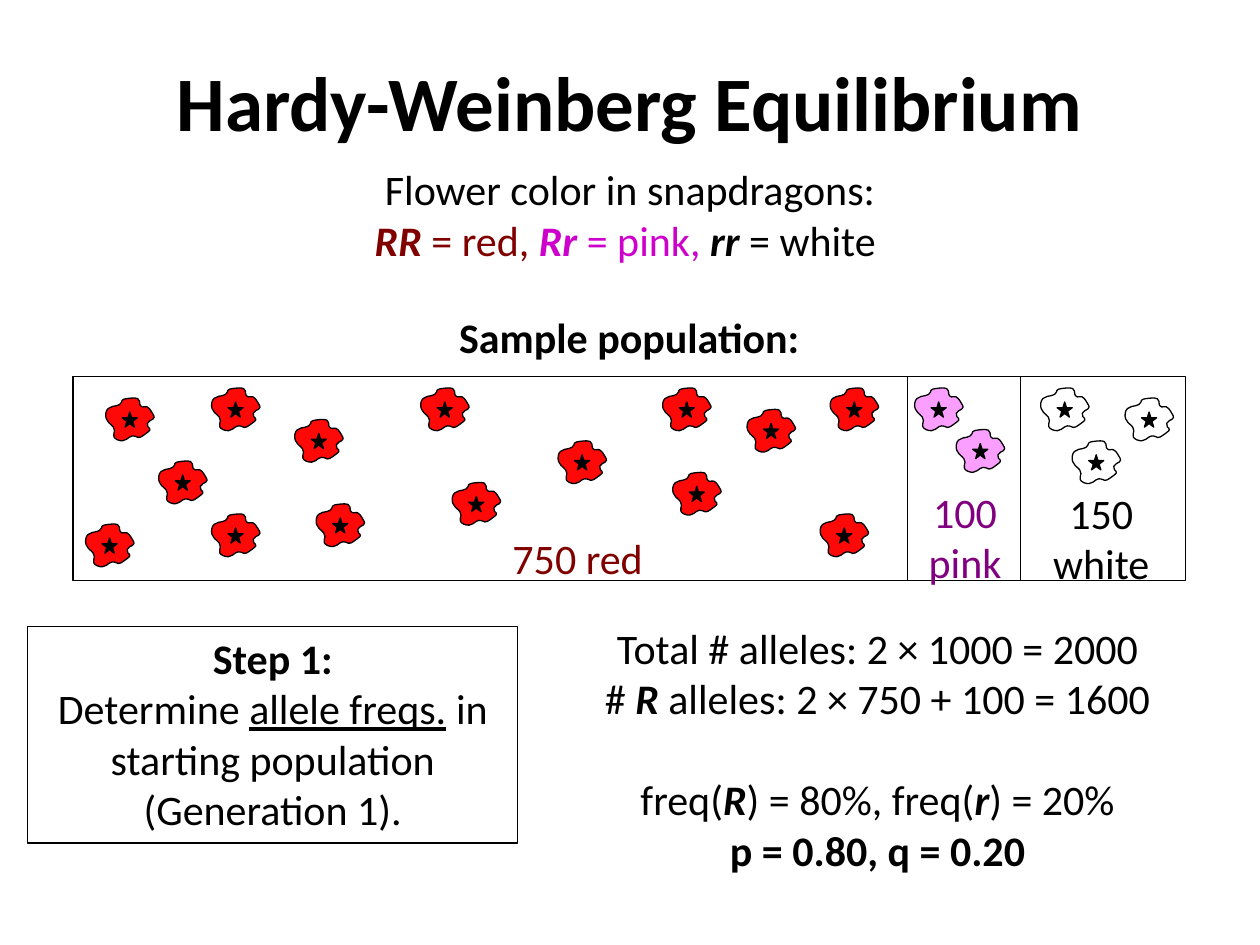
from lxml import etree
from pptx import Presentation
from pptx.dml.color import RGBColor
from pptx.enum.shapes import MSO_CONNECTOR as Connector, MSO_SHAPE as Preset
from pptx.enum.text import MSO_ANCHOR as Anchor, PP_ALIGN as Align
from pptx.oxml.ns import qn
from pptx.util import Inches, Pt

BLACK = RGBColor(0x00, 0x00, 0x00)
WHITE = RGBColor(0xFF, 0xFF, 0xFF)
MAROON = RGBColor(0x80, 0x00, 0x00)
MAGENTA = RGBColor(0xCE, 0x00, 0xCB)
PURPLE = RGBColor(0x80, 0x00, 0x80)
RED = RGBColor(0xFF, 0x08, 0x08)
PINK = RGBColor(0xFA, 0x9E, 0xFF)
FONT = "Calibri"
LINE_WIDTH = Pt(0.75)

# Run formats
PLAIN = {}
BOLD = {"bold": True}
ALLELE = {"bold": True, "italic": True}
UNDERLINED = {"underline": True}

# Content: each paragraph is a list of (text, format, colour) runs
TITLE = [[("Hardy-Weinberg Equilibrium", BOLD, BLACK)]]
COLOR_KEY = [
    [("Flower color in snapdragons:", PLAIN, BLACK)],
    [("RR", ALLELE, MAROON), (" = red, ", PLAIN, MAROON),
     ("Rr", ALLELE, MAGENTA), (" = pink, ", PLAIN, MAGENTA),
     ("rr", ALLELE, BLACK), (" = white ", PLAIN, BLACK)],
]
SAMPLE_HEADING = [[("Sample population:", BOLD, BLACK)]]
STEP = [
    [("Step 1:", BOLD, BLACK)],
    [("Determine ", PLAIN, BLACK), ("allele freqs.", UNDERLINED, BLACK),
     (" in starting population (Generation 1).", PLAIN, BLACK)],
]
COUNTS = [
    [("Total # alleles: 2 × 1000 = 2000", PLAIN, BLACK)],
    [("# ", PLAIN, BLACK), ("R", ALLELE, BLACK),
     (" alleles: 2 × 750 + 100 = 1600", PLAIN, BLACK)],
    [("freq(", PLAIN, BLACK), ("R", ALLELE, BLACK),
     (") = 80%, freq(", PLAIN, BLACK), ("r", ALLELE, BLACK),
     (") = 20%", PLAIN, BLACK)],
    [("p = 0.80, q = 0.20", BOLD, BLACK)],
]
FREQ_PARAGRAPH = 2

# Text blocks: paragraphs, (left, top, width, height), size, wraps
TEXT_BLOCKS = [
    (COLOR_KEY, (1.71, 1.25, 6.58, 0.91), 24, True),
    (SAMPLE_HEADING, (3.53, 2.42, 2.93, 0.51), 24, False),
    ([[("750 red", PLAIN, MAROON)]], (3.96, 4.18, 1.25, 0.51), 24, False),
    ([[("100 pink", PLAIN, PURPLE)]], (7.23, 3.81, 0.86, 0.91), 24, True),
    ([[("150 white", PLAIN, BLACK)]], (8.24, 3.82, 1, 0.91), 24, True),
]

POPULATION_BOX = (0.58, 2.99, 8.83, 1.62)
DIVIDERS = [7.2, 8.1]
STEP_BOX = (0.22, 4.97, 3.89, 1.72)

# Top left corner of every flower
FLOWERS = {
    WHITE: [(8.5, 3.49), (8.92, 3.15), (8.25, 3.07)],
    PINK: [(7.25, 3.07), (7.58, 3.4)],
    RED: [(6.58, 3.07), (0.83, 3.15), (2.33, 3.32), (0.67, 4.15),
          (3.58, 3.82), (1.67, 4.07), (5.33, 3.74), (1.25, 3.65),
          (5.25, 3.07), (6.5, 4.07), (1.67, 3.07), (2.5, 3.99),
          (3.33, 3.07), (5.92, 3.24), (4.42, 3.49)],
}

# Petal outline: start, then two control points and an end per curve
FLOWER_SIZE = (0.42, 0.38)
PETAL_START = (0.12, 0.06)
PETAL_CURVES = [
    ((0.16, 0.03), (0.10, 0.02), (0.21, 0.01)),
    ((0.32, 0.00), (0.25, 0.06), (0.30, 0.08)),
    ((0.33, 0.08), (0.34, 0.06), (0.38, 0.13)),
    ((0.42, 0.19), (0.36, 0.17), (0.34, 0.21)),
    ((0.33, 0.26), (0.40, 0.24), (0.33, 0.29)),
    ((0.25, 0.35), (0.28, 0.31), (0.22, 0.31)),
    ((0.19, 0.31), (0.17, 0.37), (0.10, 0.34)),
    ((0.04, 0.31), (0.10, 0.28), (0.07, 0.24)),
    ((0.06, 0.22), (0.00, 0.20), (0.01, 0.13)),
    ((0.02, 0.06), (0.10, 0.08), (0.12, 0.06)),
]
STAR_OFFSET = (0.14, 0.12)
STAR_SIZE = 0.12


def inches(values):
    return [Inches(value) for value in values]


def style(shape, fill=None):
    shape.shadow.inherit = False
    if fill is None:
        shape.fill.background()
    else:
        shape.fill.solid()
        shape.fill.fore_color.rgb = fill
    shape.line.color.rgb = BLACK
    shape.line.width = LINE_WIDTH


def write(frame, paragraphs, size=24, wraps=True, anchor=Anchor.TOP):
    frame.word_wrap = wraps
    frame.vertical_anchor = anchor
    for index, runs in enumerate(paragraphs):
        paragraph = frame.paragraphs[0] if index == 0 else frame.add_paragraph()
        paragraph.alignment = Align.CENTER
        for text, formats, color in runs:
            run = paragraph.add_run()
            run.text = text
            for name, value in {"name": FONT, "size": Pt(size), **formats}.items():
                setattr(run.font, name, value)
            run.font.color.rgb = color


def add_text(shapes, paragraphs, place, size=24, wraps=True, anchor=Anchor.TOP):
    frame = shapes.add_textbox(*inches(place)).text_frame
    write(frame, paragraphs, size, wraps, anchor)
    return frame


def add_step(outline, tag, points):
    step = etree.SubElement(outline, qn(tag))
    for x, y in points:
        etree.SubElement(step, qn("a:pt"), x=str(Inches(x)), y=str(Inches(y)))


def add_petals(shapes, corner, color):
    # The freeform gets its frame here; curves then replace its straight sides
    width, height = inches(FLOWER_SIZE)
    builder = shapes.build_freeform(0, 0)
    builder.add_line_segments([(width, 0), (width, height)], close=True)
    petals = builder.convert_to_shape(*inches(corner))
    outline = next(petals.element.iter(qn("a:path")))
    for side in list(outline):
        outline.remove(side)
    add_step(outline, "a:moveTo", [PETAL_START])
    for curve in PETAL_CURVES:
        add_step(outline, "a:cubicBezTo", curve)
    add_step(outline, "a:close", [])
    style(petals, color)


def add_flower(shapes, corner, color):
    add_petals(shapes, corner, color)
    star_corner = [c + offset for c, offset in zip(corner, STAR_OFFSET)]
    star = shapes.add_shape(Preset.STAR_5_POINT,
                            *inches((*star_corner, STAR_SIZE, STAR_SIZE)))
    style(star, BLACK)


def main():
    prs = Presentation()
    prs.slide_width, prs.slide_height = Inches(10), Inches(7.5)
    shapes = prs.slides.add_slide(prs.slide_layouts[6]).shapes

    add_text(shapes, TITLE, (0.79, 0.17, 8.42, 1.25), 44, anchor=Anchor.MIDDLE)

    # Population box with its dividers
    style(shapes.add_shape(Preset.RECTANGLE, *inches(POPULATION_BOX)))
    _, top, _, height = POPULATION_BOX
    for x in DIVIDERS:
        divider = shapes.add_connector(Connector.STRAIGHT,
                                       *inches((x, top, x, top + height)))
        divider.line.color.rgb = BLACK
        divider.line.width = LINE_WIDTH
        etree.SubElement(divider.element.spPr, qn("a:effectLst"))

    # Flowers
    for color, corners in FLOWERS.items():
        for corner in corners:
            add_flower(shapes, corner, color)

    # Labels and color key
    for block in TEXT_BLOCKS:
        add_text(shapes, *block)

    # Step box and allele counts
    step_box = shapes.add_shape(Preset.RECTANGLE, *inches(STEP_BOX))
    style(step_box)
    write(step_box.text_frame, STEP)
    counts = add_text(shapes, COUNTS, (4.25, 4.89, 5.43, 2.12))
    counts.paragraphs[FREQ_PARAGRAPH].space_before = Pt(29)

    prs.save("out.pptx")


if __name__ == "__main__":
    main()
